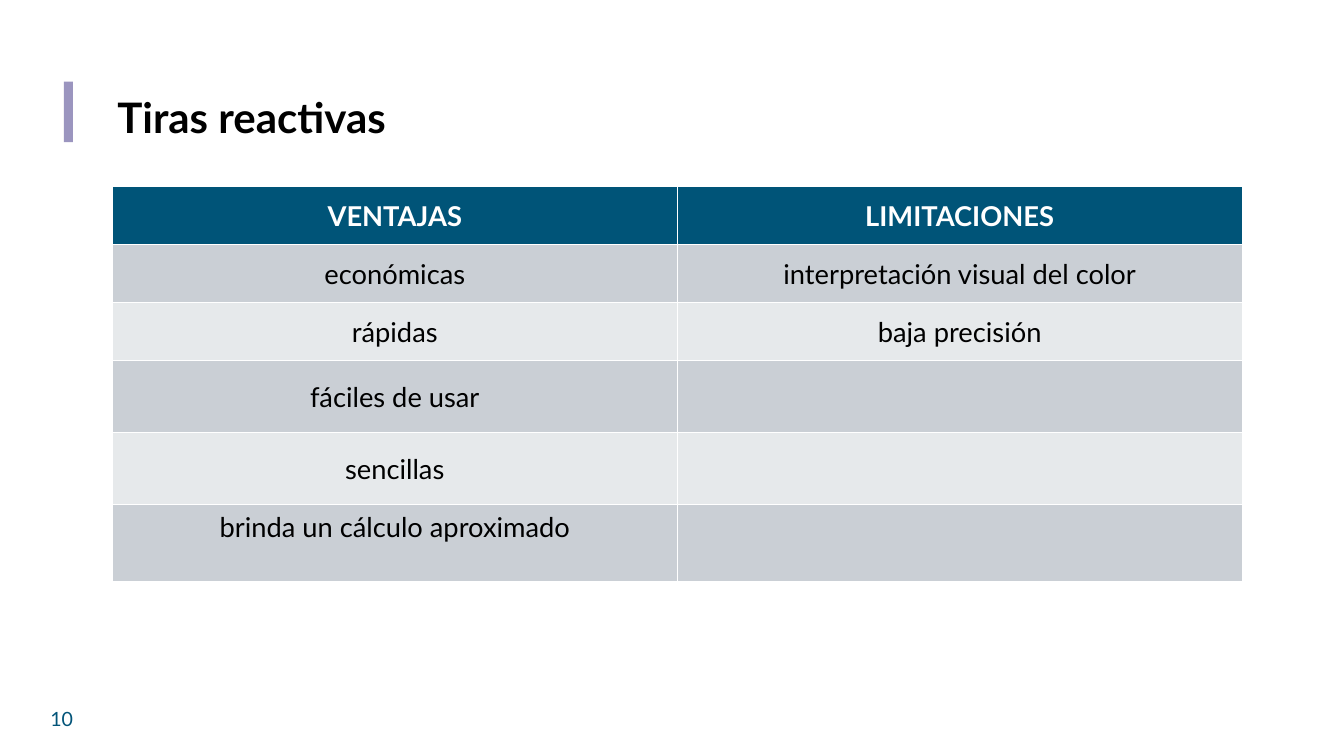
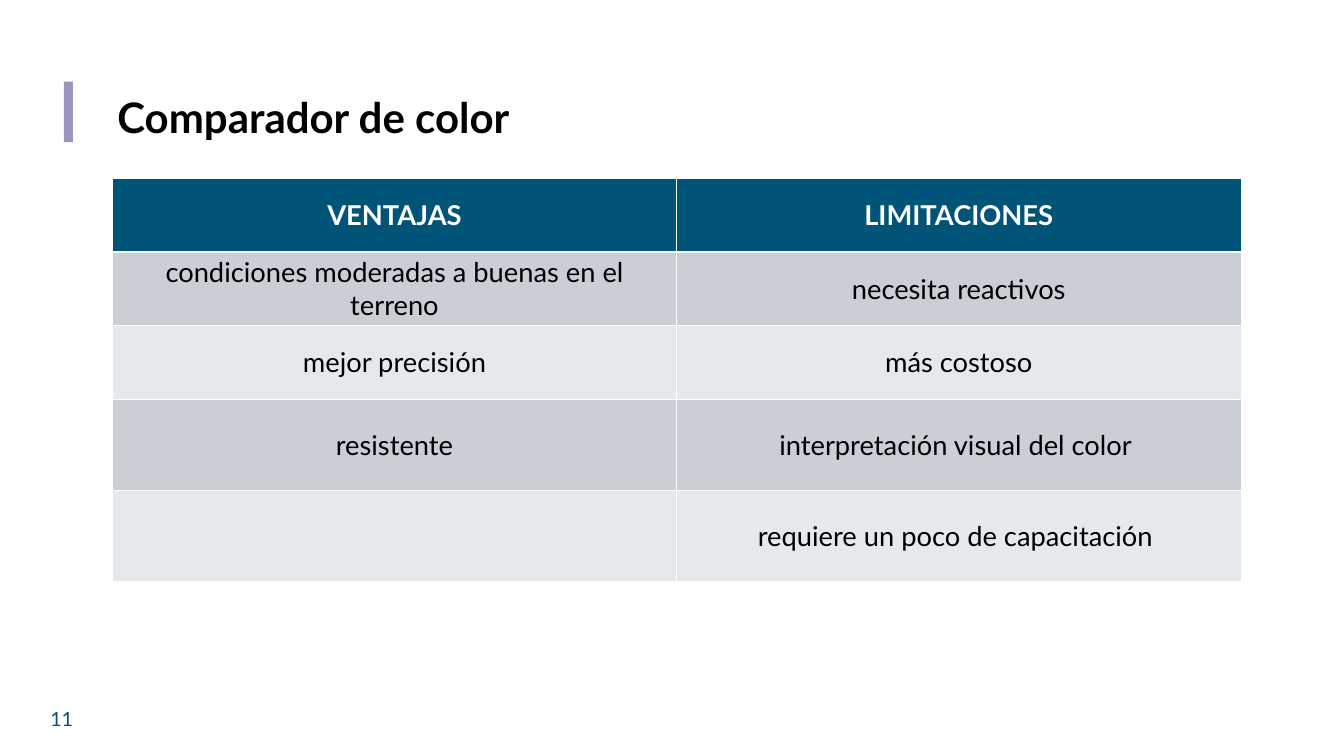
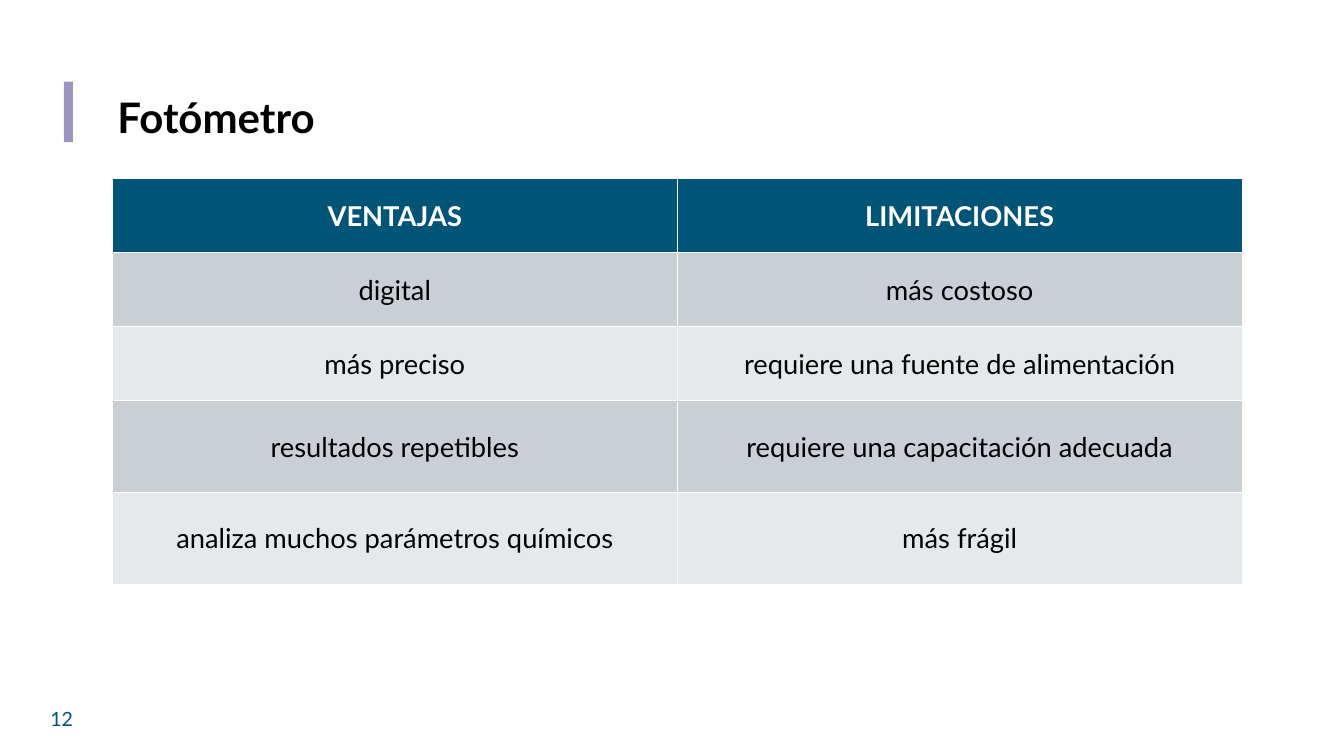
import pptx
import pptx.util
import pptx.dml.color
import pptx.enum.shapes
import pptx.enum.text
import pptx.oxml
import pptx.oxml.ns

COLORS = {
    "bar": "9B95BF",
    "number": "025479",
    "header": "005478",
    "odd": "CACFD5",
    "even": "E6E9EB",
    "white": "FFFFFF",
    "black": "000000",
}
FONT = "Lato"
WIDTH, HEIGHT = pptx.util.Inches(26.67), pptx.util.Inches(15)
COL, ROW = WIDTH / 100, HEIGHT / 100
LEFT = 8.36
FIRST_NUMBER = 10
HEADINGS = ("VENTAJAS", "LIMITACIONES")
LINE_HEIGHT = 0.64

SLIDES = [
    {
        "title": "Tiras reactivas",
        "top": 24.67,
        "width": 84.06,
        "margin": 0.15,
        "heights": [7.67, 7.67, 7.67, 9.53, 9.53, 10.2],
        "rows": [
            ("económicas", "interpretación visual del color"),
            ("rápidas", "baja precisión"),
            ("fáciles de usar", ""),
            ("sencillas", ""),
            ("brinda un cálculo aproximado", ""),
        ],
        "raised": (5, 0),
    },
    {
        "title": "Comparador de color",
        "top": 23.6,
        "width": 83.97,
        "margin": 0.15,
        "heights": [9.73, 9.73, 9.73, 12.07, 12.07],
        "rows": [
            ("condiciones moderadas a buenas en el terreno", "necesita reactivos"),
            ("mejor precisión", "más costoso"),
            ("resistente", "interpretación visual del color "),
            ("", "requiere un poco de capacitación "),
        ],
    },
    {
        "title": "Fotómetro",
        "top": 23.6,
        "width": 84.06,
        "margin": 0.14,
        "heights": [9.8, 9.8, 9.8, 12.13, 12.13],
        "rows": [
            ("digital", "más costoso"),
            ("más preciso", "requiere una fuente de alimentación"),
            ("resultados repetibles", "requiere una capacitación adecuada"),
            ("analiza muchos parámetros químicos", "más frágil"),
        ],
    },
]


def rgb(name):
    return pptx.dml.color.RGBColor.from_string(COLORS[name])


def box(left, top, width, height):
    return [int(n) for n in (left * COL, top * ROW, width * COL, height * ROW)]


def set_margins(target, side, top, bottom):
    target.margin_left = target.margin_right = pptx.util.Inches(side)
    target.margin_top = pptx.util.Inches(top)
    target.margin_bottom = pptx.util.Inches(bottom)


def add_text(tf, text, size, color, bold=False, align="CENTER"):
    p = tf.paragraphs[0]
    p.alignment = getattr(pptx.enum.text.PP_ALIGN, align)
    r = p.add_run()
    r.text = text
    r.font.name = FONT
    r.font.size = pptx.util.Pt(size)
    r.font.bold = bold
    r.font.color.rgb = rgb(color)


def add_layout_bar(layout, slide):
    sp = slide.shapes.add_shape(
        pptx.enum.shapes.MSO_SHAPE.RECTANGLE, *box(4.76, 10.8, 0.67, 8))
    sp.rotation = 180
    sp.shadow.inherit = False
    sp.fill.solid()
    sp.fill.fore_color.rgb = rgb("bar")
    sp.line.fill.background()
    layout.shapes.element.append(sp.element)


def add_number(slide, number):
    sp = slide.shapes.add_textbox(*box(3.56, 93.07, 2.06, 3.87))
    tf = sp.text_frame
    tf.word_wrap = False
    tf.auto_size = pptx.enum.text.MSO_AUTO_SIZE.NONE
    set_margins(tf, 0, 0.06, 0.06)
    add_text(tf, str(number), 28, "number")


def set_title(slide, text):
    sp = slide.shapes.title
    sp.left, sp.top, sp.width, sp.height = box(LEFT, 11.8, 40.57, 7.4)
    tf = sp.text_frame
    tf.word_wrap = True
    tf.auto_size = pptx.enum.text.MSO_AUTO_SIZE.SHAPE_TO_FIT_TEXT
    tf.vertical_anchor = pptx.enum.text.MSO_ANCHOR.TOP
    set_margins(tf, 0.1, 0.05, 0.05)
    add_text(tf, text, 60, "black", True, "LEFT")


def add_borders(cell, row):
    widths = {"L": 1, "R": 1, "T": 3 if row == 1 else 1, "B": 3 if row == 0 else 1}
    tc_pr = cell._tc.get_or_add_tcPr()
    for side, width in widths.items():
        tc_pr.append(pptx.oxml.parse_xml(
            f'<a:ln{side} {pptx.oxml.ns.nsdecls("a")} w="{pptx.util.Pt(width)}">'
            f'<a:solidFill><a:srgbClr val="{COLORS["white"]}"/></a:solidFill>'
            f'</a:ln{side}>'))


def format_cell(cell, row, text, margin, raised):
    add_borders(cell, row)
    cell.fill.solid()
    cell.fill.fore_color.rgb = rgb("header" if row == 0 else "odd" if row % 2 else "even")
    cell.vertical_anchor = pptx.enum.text.MSO_ANCHOR.MIDDLE
    set_margins(cell, margin, 0.07, 0.07 + (LINE_HEIGHT if raised else 0))
    if text:
        add_text(cell.text_frame, text, 39, "black" if row else "white", row == 0)


def add_comparison(slide, data):
    rows = [HEADINGS] + data["rows"]
    heights = data["heights"]
    frame = slide.shapes.add_table(
        len(rows), len(HEADINGS), *box(LEFT, data["top"], data["width"], sum(heights)))
    table = frame.table
    for column in table.columns:
        column.width = int(data["width"] * COL / len(HEADINGS))
    for i, (texts, height) in enumerate(zip(rows, heights)):
        table.rows[i].height = int(height * ROW)
        for j, text in enumerate(texts):
            format_cell(table.cell(i, j), i, text, data["margin"],
                        data.get("raised") == (i, j))


def main():
    prs = pptx.Presentation()
    prs.slide_width, prs.slide_height = WIDTH, HEIGHT
    layout = prs.slide_layouts.get_by_name("Title Only")
    for i, data in enumerate(SLIDES):
        slide = prs.slides.add_slide(layout)
        if i == 0:
            add_layout_bar(layout, slide)
        add_number(slide, FIRST_NUMBER + i)
        set_title(slide, data["title"])
        add_comparison(slide, data)
    prs.save("out.pptx")


if __name__ == "__main__":
    main()
